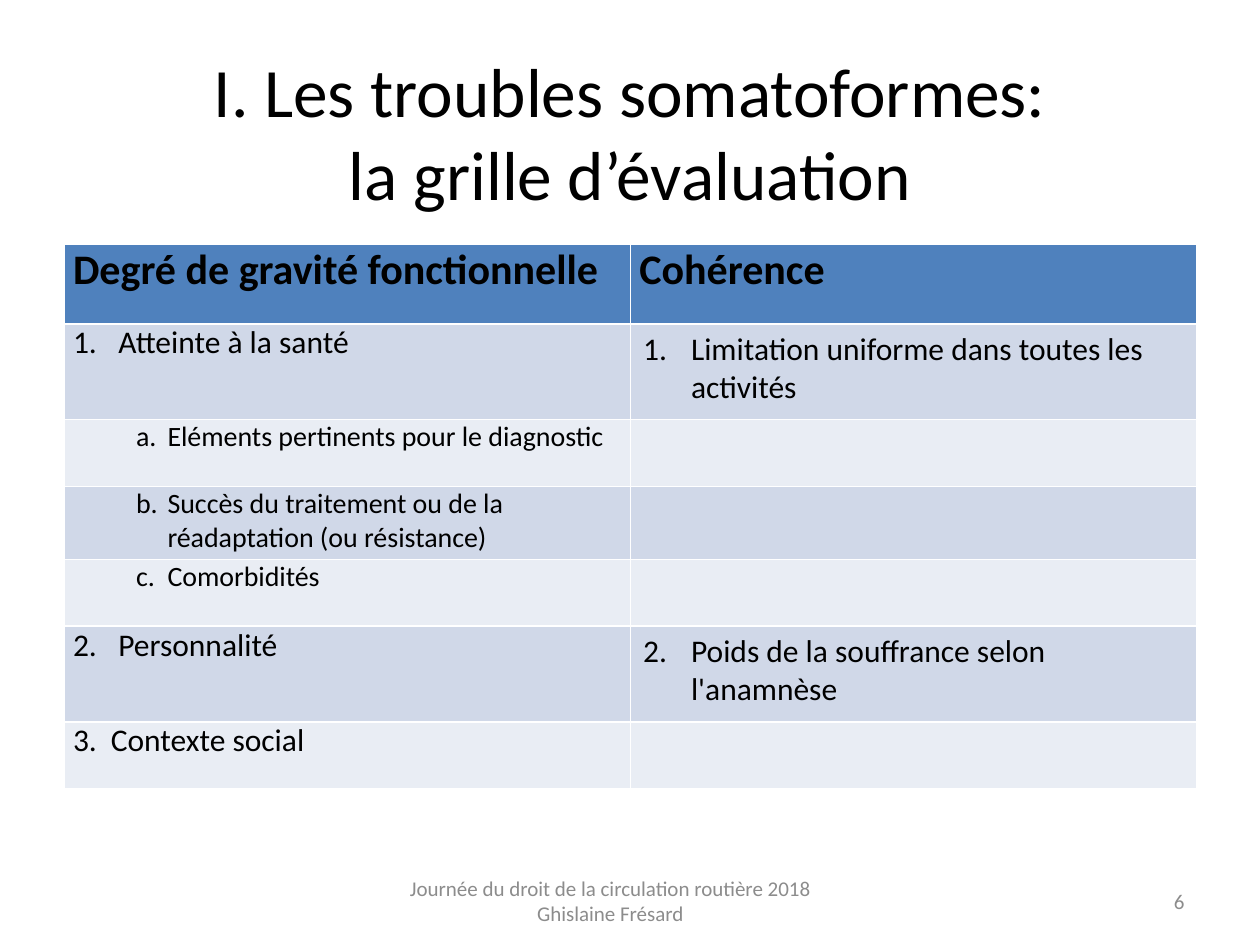
from lxml import etree
from pptx import Presentation
from pptx.dml.color import RGBColor
from pptx.enum import text
from pptx.oxml.ns import qn
from pptx.util import Inches, Pt

HEADER, BAND_DARK, BAND_LIGHT = "4F81BD", "D0D8E8", "E9EDF4"
BLACK, GREY = "000000", "8C8C8C"

HEADINGS = ("Degré de gravité fonctionnelle", "Cohérence")
# Row height, severity entry and coherence entry;
# an entry is its text, size, left margin and hanging indent
CRITERIA = [
    (0.76, ("1.\tAtteinte à la santé", 18, 0.36, 0.36),
     ("Limitation uniforme dans toutes les activités", 18, 0.38, 0.38)),
    (0.53, ("a.\tEléments pertinents pour le diagnostic", 16, 0.75, 0.25), None),
    (0.58, ("b.\tSuccès du traitement ou de la réadaptation (ou résistance)",
            16, 0.75, 0.25), None),
    (0.53, ("c.\tComorbidités", 16, 0.75, 0.25), None),
    (0.76, ("2.\tPersonnalité", 18, 0.36, 0.36),
     ("2.\tPoids de la souffrance selon l'anamnèse", 18, 0.38, 0.38)),
    (0.53, ("3.\tContexte social", 18, 0.3, 0.3), None),
]


def color(value):
    return RGBColor.from_string(value)


def style(paragraph, size, ink=BLACK, bold=False):
    font = paragraph.font
    font.name, font.size, font.bold = "Calibri", Pt(size), bold
    font.color.rgb = color(ink)


def paint(cell, fill):
    cell.fill.solid()
    cell.fill.fore_color.rgb = color(fill)


def tighten(cell):
    cell.margin_left = cell.margin_right = Inches(0.07)
    cell.margin_top = cell.margin_bottom = 0


def write_entry(cell, entry):
    wording, size, margin, hang = entry
    paragraph = cell.text_frame.paragraphs[0]
    paragraph.text = wording
    style(paragraph, size)
    props = paragraph._p.get_or_add_pPr()
    props.set("marL", str(Inches(margin)))
    props.set("indent", str(-Inches(hang)))
    if "\t" not in wording:  # automatic numbering
        numbering = etree.Element(qn("a:buAutoNum"), type="arabicPeriod")
        props.insert_element_before(numbering, "a:tabLst", "a:defRPr", "a:extLst")


def add_title(slide, left, top, width, height):
    title = slide.shapes.title
    title.left, title.top = Inches(left), Inches(top)
    title.width, title.height = Inches(width), Inches(height)
    title.text_frame.text = "I. Les troubles somatoformes:\vla grille d’évaluation"
    title.text_frame.vertical_anchor = text.MSO_ANCHOR.MIDDLE
    paragraph = title.text_frame.paragraphs[0]
    paragraph.alignment = text.PP_ALIGN.CENTER
    style(paragraph, 39.6)


def add_grid(slide, left, top, width, header_height):
    heights = [header_height] + [row[0] for row in CRITERIA]
    grid = slide.shapes.add_table(
        len(heights), len(HEADINGS), Inches(left), Inches(top),
        Inches(width), Inches(sum(heights))).table
    for row, height in zip(grid.rows, heights):
        row.height = Inches(height)

    # Header row
    for cell, heading in zip(grid.rows[0].cells, HEADINGS):
        tighten(cell)
        paint(cell, HEADER)
        cell.text = heading
        style(cell.text_frame.paragraphs[0], 24, bold=True)

    # Criteria on alternating bands
    for number, (_, severity, coherence) in enumerate(CRITERIA, 1):
        cells = grid.rows[number].cells
        tighten(cells[0])
        for cell, entry in zip(cells, (severity, coherence)):
            paint(cell, BAND_DARK if number % 2 else BAND_LIGHT)
            if entry:
                write_entry(cell, entry)


def add_footer(slide, left, top, width, height, wording, alignment):
    box = slide.shapes.add_textbox(
        Inches(left), Inches(top), Inches(width), Inches(height))
    frame = box.text_frame
    frame.word_wrap = True
    frame.vertical_anchor = text.MSO_ANCHOR.MIDDLE
    frame.text = wording
    frame.paragraphs[0].alignment = alignment
    style(frame.paragraphs[0], 12, GREY)


def main():
    deck = Presentation()
    deck.slide_width, deck.slide_height = Inches(10), Inches(7.5)
    slide = deck.slides.add_slide(deck.slide_layouts[5])
    add_title(slide, 0.5, 0.3, 9, 1.48)
    add_grid(slide, 0.51, 1.94, 8.99, 0.63)
    add_footer(slide, 3.11, 6.95, 3.47, 0.4,
               "Journée du droit de la circulation routière 2018 Ghislaine Frésard",
               text.PP_ALIGN.CENTER)
    add_footer(slide, 7.17, 6.95, 2.33, 0.4, "6", text.PP_ALIGN.RIGHT)
    deck.save("out.pptx")


if __name__ == "__main__":
    main()
